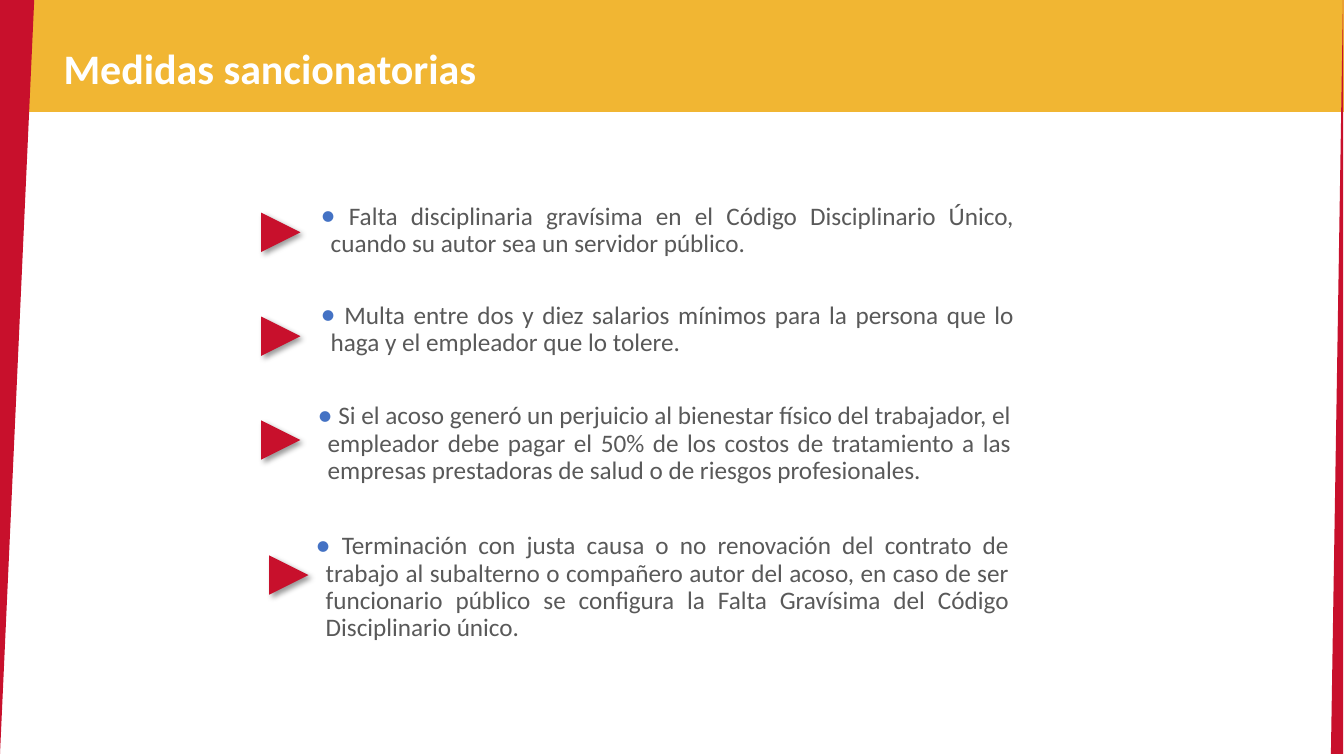
from lxml import etree
from pptx import Presentation, util as u
from pptx.dml.color import RGBColor
from pptx.enum import shapes, text
from pptx.oxml.ns import qn

TITLE = "Medidas sancionatorias"
# wording, box (left, top, height), arrow (left, top)
ITEMS = [
    (" Falta disciplinaria gravísima en el Código Disciplinario Único, "
     "cuando su autor sea un servidor público.",
     (3.06, 1.96, 0.79), (2.59, 2.11)),
    (" Multa entre dos y diez salarios mínimos para la persona que lo "
     "haga y el empleador que lo tolere.",
     (3.06, 2.94, 0.79), (2.59, 3.14)),
    (" Si el acoso generó un perjuicio al bienestar físico del trabajador, "
     "el empleador debe pagar el 50% de los costos de tratamiento a las "
     "empresas prestadoras de salud o de riesgos profesionales.",
     (3.03, 3.94, 1.13), (2.59, 4.17)),
    (" Terminación con justa causa o no renovación del contrato de trabajo "
     "al subalterno o compañero autor del acoso, en caso de ser funcionario "
     "público se configura la Falta Gravísima del Código Disciplinario único.",
     (3.01, 5.23, 1.13), (2.67, 5.51)),
]
WIDE, HIGH = 13.33, 7.5
TOP = -0.02
ITEM_W, ARROW = 7.12, 0.39


class Theme:
    font = "Calibri"
    gold, red, white = "F1B633", "C8102C", "FFFFFF"
    grey, dot, shade = "595959", "4472C4", "000000"
    head, body = 30, 18


def place(shape, *box):
    shape.left, shape.top, shape.width, shape.height = map(u.Inches, box)


def draw(slide, kind, box, color, turn=0):
    shape = slide.shapes.add_shape(kind, *map(u.Inches, box))
    shape.fill.solid()
    shape.fill.fore_color.rgb = RGBColor.from_string(color)
    shape.line.fill.background()
    shape.shadow.inherit = False
    shape.rotation = turn
    return shape


def child(node, tag, **attrs):
    return etree.SubElement(node, qn(tag), attrs)


def cast(shape):
    """Give the shape a soft shadow towards the lower right."""
    list_ = shape.element.spPr.find(qn("a:effectLst"))
    outer = child(list_, "a:outerShdw", blurRad=str(u.Pt(4)),
                  dist=str(u.Pt(3)), dir="2700000", rotWithShape="0")
    color = child(outer, "a:srgbClr", val=Theme.shade)
    child(color, "a:alpha", val="40000")


def bullet(para):
    props = para._p.get_or_add_pPr()
    props.set("marL", str(u.Inches(0.1)))
    props.set("indent", str(u.Inches(-0.1)))
    child(child(props, "a:buClr"), "a:srgbClr", val=Theme.dot)
    child(props, "a:buSzPct", val="120000")
    child(props, "a:buFont", typeface=Theme.font)
    child(props, "a:buChar", char="•")


def write(holder, words, size, color, bold, align):
    """Fill a placeholder with one run and return its paragraph."""
    frame = holder.text_frame
    frame.word_wrap = True
    frame.auto_size = text.MSO_AUTO_SIZE.NONE
    frame.vertical_anchor = text.MSO_ANCHOR.TOP
    para = frame.paragraphs[0]
    para.alignment = align
    para.space_before = u.Pt(0)
    run = para.add_run()
    run.text = words
    run.font.name, run.font.size, run.font.bold = Theme.font, u.Pt(size), bold
    run.font.color.rgb = RGBColor.from_string(color)
    return para


def main():
    deck = Presentation()
    deck.slide_width, deck.slide_height = u.Inches(WIDE), u.Inches(HIGH)
    # the comparison layout has a title and four body placeholders
    slide = deck.slides.add_slide(deck.slide_layouts[4])
    title, *bodies = list(slide.placeholders)
    kinds = shapes.MSO_SHAPE

    draw(slide, kinds.RECTANGLE, (0, TOP, WIDE, 1.13), Theme.gold)
    for left, width, turn in [(0, 0.34, 180), (13.2, 0.12, 0)]:
        edge = draw(slide, kinds.ISOSCELES_TRIANGLE,
                    (left, TOP, width, HIGH), Theme.red, turn)
        edge.adjustments[0] = 1

    for holder in (title, *bodies):  # bring the text in front of the bands
        slide.shapes.element.append(holder.element)

    place(title, 0.53, 0.37, 6.51, 0.61)
    write(title, TITLE, Theme.head, Theme.white, True, text.PP_ALIGN.LEFT)

    for body, (words, (left, top, high), spot) in zip(bodies, ITEMS):
        place(body, left, top, ITEM_W, high)
        para = write(body, words, Theme.body, Theme.grey, False,
                     text.PP_ALIGN.JUSTIFY)
        para.line_spacing = 0.9
        bullet(para)
        frame = body.text_frame
        frame.margin_left = frame.margin_right = u.Inches(0.12)
        frame.margin_top = frame.margin_bottom = u.Inches(0.06)
        cast(draw(slide, kinds.ISOSCELES_TRIANGLE,
                  (*spot, ARROW, ARROW), Theme.red, 90))

    deck.save("out.pptx")


if __name__ == "__main__":
    main()
